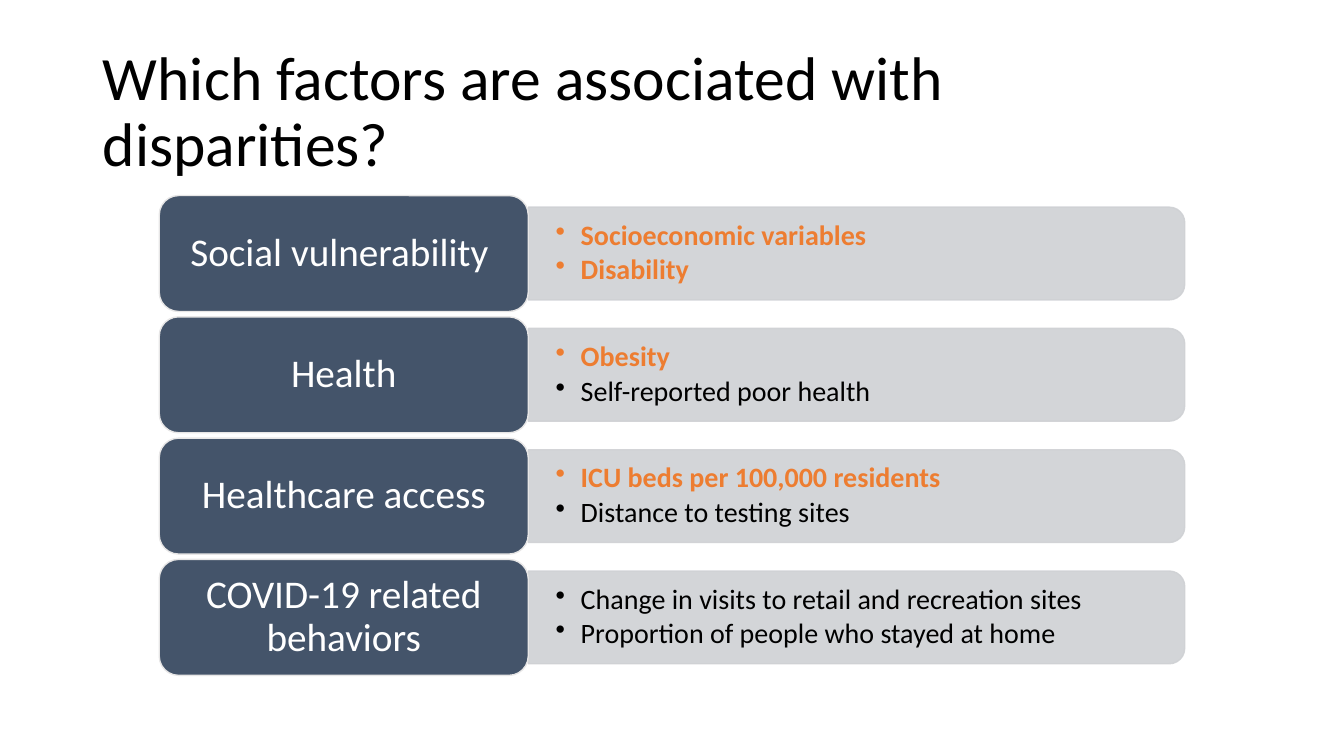
from dataclasses import dataclass

from lxml import etree
from pptx import Presentation
from pptx import util as u
from pptx.dml.color import RGBColor
from pptx.enum import shapes, text
from pptx.oxml.ns import qn

TITLE = "Which factors are associated with disparities?"
# Each factor: label, then (variable, is it highlighted?)
FACTORS = [
    ("Social vulnerability ", [("Socioeconomic variables", True),
                               ("Disability", True)]),
    ("Health", [("Obesity", True),
                ("Self-reported poor health", False)]),
    ("Healthcare access", [("ICU beds per 100,000 residents", True),
                           ("Distance to testing sites", False)]),
    ("COVID-19 related behaviors", [
        ("Change in visits to retail and recreation sites", False),
        ("Proportion of people who stayed at home", False)]),
]


@dataclass(frozen=True)
class Theme:
    font: str = "Calibri"
    title_size: int = 44
    label_size: int = 28
    item_size: int = 20
    ink: str = "000000"
    accent: str = "ED7D31"
    label_fill: str = "44546A"
    label_line: str = "E7E6E6"
    label_ink: str = "FFFFFF"
    panel: str = "CFD1D4"
    panel_alpha: int = 90


THEME = Theme()
SLIDE_W, SLIDE_H = 13.33, 7.5

# Rows fill the height from TOP to BOTTOM with equal gaps
LEFT, TOP, BOTTOM = 1.58, 1.94, 6.7
LABEL_W, LABEL_H = 3.66, 1.15
PANEL_W, PANEL_H = 6.51, LABEL_H * 0.8
PITCH = (BOTTOM - TOP - LABEL_H) / (len(FACTORS) - 1)


def box(*lengths):
    return [u.Inches(n) for n in lengths]


def style_paragraph(p, size, color, bold=False, after=0):
    p.line_spacing = 0.9
    p.space_before, p.space_after = u.Pt(0), u.Pt(after)
    for r in p.runs:
        r.font.name, r.font.size, r.font.bold = THEME.font, u.Pt(size), bold
        r.font.color.rgb = RGBColor.from_string(color)


def set_frame(tf, inset_x, inset_y):
    tf.word_wrap = True
    tf.auto_size = text.MSO_AUTO_SIZE.NONE
    tf.vertical_anchor = text.MSO_ANCHOR.MIDDLE
    tf.margin_left = tf.margin_right = u.Inches(inset_x)
    tf.margin_top = tf.margin_bottom = u.Inches(inset_y)


def set_bullet(p):
    pPr = p._p.get_or_add_pPr()
    pPr.set("marL", str(u.Inches(0.25)))
    pPr.set("indent", str(-u.Inches(0.25)))
    etree.SubElement(pPr, qn("a:buChar"), char="•")


def add_block(slide, kind, at, fill, line):
    sp = slide.shapes.add_shape(kind, *box(*at))
    sp.shadow.inherit = False
    sp.fill.solid()
    sp.fill.fore_color.rgb = RGBColor.from_string(fill)
    sp.line.color.rgb = RGBColor.from_string(line)
    sp.line.width = u.Pt(1)
    return sp


def add_panel(slide, left, middle):
    """Turn a top-rounded rectangle so that its rounded end faces right."""
    at = (left + (PANEL_W - PANEL_H) / 2, middle - PANEL_W / 2, PANEL_H, PANEL_W)
    sp = add_block(slide, shapes.MSO_SHAPE.ROUND_2_SAME_RECTANGLE, at,
                   THEME.panel, THEME.panel)
    sp.rotation = 90
    for clr in sp._element.spPr.iter(qn("a:srgbClr")):
        etree.SubElement(clr, qn("a:alpha"), val=str(THEME.panel_alpha * 1000))


def add_items(slide, left, middle, items):
    height = PANEL_H * 0.9
    tb = slide.shapes.add_textbox(
        *box(left, middle - height / 2, PANEL_W - 0.04, height))
    tf = tb.text_frame
    set_frame(tf, 0.27, 0.14)
    tf.text = "\n".join(name for name, _ in items)
    for p, (_, highlighted) in zip(tf.paragraphs, items):
        p.level = 1
        color = THEME.accent if highlighted else THEME.ink
        style_paragraph(p, THEME.item_size, color, highlighted, after=3)
        set_bullet(p)


def add_label(slide, top, label):
    sp = add_block(slide, shapes.MSO_SHAPE.ROUNDED_RECTANGLE,
                   (LEFT, top, LABEL_W, LABEL_H),
                   THEME.label_fill, THEME.label_line)
    tf = sp.text_frame
    set_frame(tf, 0.12, 0.06)
    tf.text = label
    p = tf.paragraphs[0]
    p.alignment = text.PP_ALIGN.CENTER
    style_paragraph(p, THEME.label_size, THEME.label_ink)


def add_title(slide):
    title = slide.shapes.title
    title.left, title.top, title.width, title.height = box(0.92, 0.4, 11.5, 1.45)
    tf = title.text_frame
    set_frame(tf, 0.1, 0.05)
    tf.text = TITLE
    p = tf.paragraphs[0]
    p.alignment = text.PP_ALIGN.LEFT
    style_paragraph(p, THEME.title_size, THEME.ink)


def main():
    prs = Presentation()
    prs.slide_width, prs.slide_height = box(SLIDE_W, SLIDE_H)
    slide = prs.slides.add_slide(prs.slide_layouts.get_by_name("Title Only"))
    add_title(slide)
    for row, (label, items) in enumerate(FACTORS):
        top = TOP + row * PITCH
        middle = top + LABEL_H / 2
        add_panel(slide, LEFT + LABEL_W, middle)
        add_items(slide, LEFT + LABEL_W, middle, items)
        add_label(slide, top, label)
    prs.save("out.pptx")


if __name__ == "__main__":
    main()
